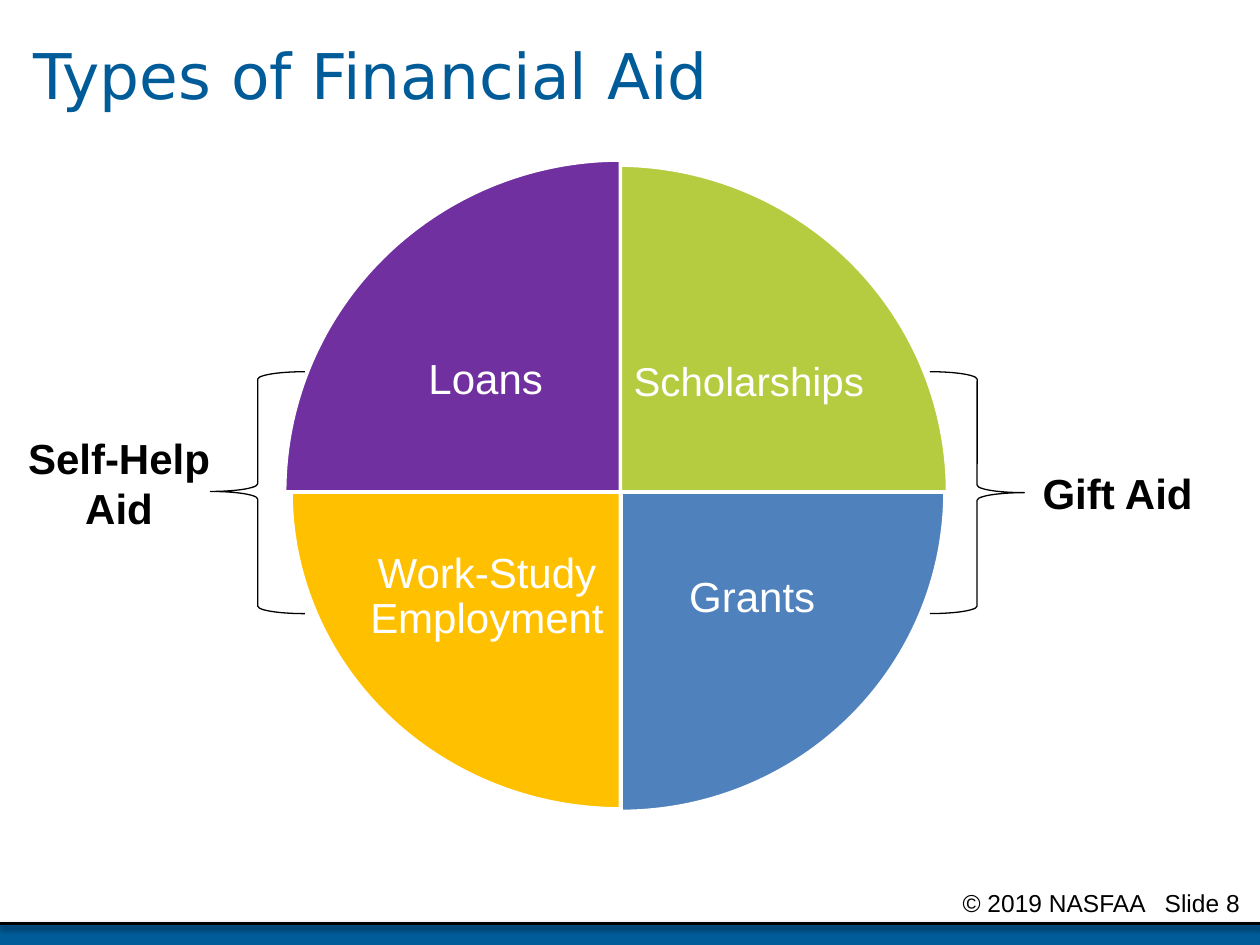
from lxml.etree import SubElement
from pptx import Presentation
from pptx.dml.color import RGBColor
from pptx.enum.shapes import MSO_CONNECTOR, MSO_SHAPE
from pptx.enum.text import MSO_ANCHOR, PP_ALIGN
from pptx.oxml.ns import qn
from pptx.util import Pt

BLUE = RGBColor(0x00, 0x5B, 0x99)
BLACK = RGBColor(0x00, 0x00, 0x00)
WHITE = RGBColor(0xFF, 0xFF, 0xFF)
GREEN = RGBColor(0xB5, 0xCC, 0x40)
STEEL = RGBColor(0x4F, 0x81, 0xBD)
GOLD = RGBColor(0xFF, 0xC0, 0x00)
PURPLE = RGBColor(0x70, 0x30, 0xA0)

WIDE, HIGH = 720, 540
BASE = 527.76
TURN = 54

SLICES = [
    ("Scholarships", GREEN, (163.44, 94.32, 378, 373.68), (356.4, 163.44, 139.68, 111.6),
     23, PP_ALIGN.RIGHT),
    ("Grants", STEEL, (169.92, 98.64, 370.08, 365.04), (361.44, 288, 136.8, 108.72),
     24, PP_ALIGN.CENTER),
    ("Work-Study Employment", GOLD, (166.32, 100.08, 376.56, 362.16), (208.8, 287.28, 138.96, 108),
     24, PP_ALIGN.CENTER),
    ("Loans", PURPLE, (162.72, 91.44, 383.76, 379.44), (206.64, 161.28, 141.84, 113.04),
     24, PP_ALIGN.CENTER),
]
SIDES = [
    ("Gift Aid", MSO_SHAPE.RIGHT_BRACE, 531.36, 0.5, (580.32, 263.52, 116.64, 36)),
    ("Self-Help Aid", MSO_SHAPE.LEFT_BRACE, 120.24, 0.495, (7.92, 243.36, 120.24, 65.52)),
]

deck = Presentation()
deck.slide_width, deck.slide_height = Pt(WIDE), Pt(HIGH)
slide = deck.slides.add_slide(deck.slide_layouts[6])
shapes = slide.shapes


def write(text, box, size=24, font="Arial", color=BLACK, bold=False, align=PP_ALIGN.CENTER,
          anchor=MSO_ANCHOR.TOP, inset=(7.2, 3.6), space=None, tab=None):
    frame = shapes.add_textbox(*map(Pt, box)).text_frame
    frame.word_wrap = True
    frame.vertical_anchor = anchor
    frame.margin_left = frame.margin_right = Pt(inset[0])
    frame.margin_top = frame.margin_bottom = Pt(inset[1])
    para = frame.paragraphs[0]
    para.alignment = align
    if space:
        para.line_spacing = space
    if tab:
        stops = SubElement(para._p.get_or_add_pPr(), qn("a:tabLst"))
        SubElement(stops, qn("a:tab"), pos=str(Pt(tab)), algn="r")
    run = para.add_run()
    run.text = text
    run.font.size = Pt(size)
    run.font.name = font
    run.font.bold = bold
    run.font.color.rgb = color


def draw(kind, box, fill=None, line=None, width=1, adjust=()):
    shape = shapes.add_shape(kind, *map(Pt, box))
    shape.shadow.inherit = False
    if fill is None:
        shape.fill.background()
    else:
        shape.fill.solid()
        shape.fill.fore_color.rgb = fill
    if line is None:
        shape.line.fill.background()
    else:
        shape.line.color.rgb = line
        shape.line.width = Pt(width)
    for i, value in enumerate(adjust):
        shape.adjustments[i] = value


def rule():
    line = shapes.add_connector(MSO_CONNECTOR.STRAIGHT, Pt(0), Pt(BASE), Pt(WIDE), Pt(BASE))
    line.line.color.rgb = BLACK
    line.line.width = Pt(2)
    effects = SubElement(line._element.spPr, qn("a:effectLst"))
    shade = SubElement(effects, qn("a:outerShdw"), blurRad=str(Pt(3.1)), dist=str(Pt(1.6)),
                       dir="5400000", rotWithShape="0")
    tint = SubElement(shade, qn("a:srgbClr"), val=str(BLACK))
    SubElement(tint, qn("a:alpha"), val="38000")


draw(MSO_SHAPE.RECTANGLE, (0, BASE, WIDE, 14.4), fill=BLUE)
rule()
write("© 2019 NASFAA\tSlide 8", (543, 504, 177, 18), size=14, align=PP_ALIGN.LEFT, tab=158.4)
write("Types of Financial Aid", (12.24, 0, 696.24, 90), size=36, font="DejaVu Sans", color=BLUE,
      align=PP_ALIGN.LEFT, anchor=MSO_ANCHOR.MIDDLE, space=0.9)

for i, (name, fill, pie, label, size, align) in enumerate(SLICES):
    start, end = (i + 3) % 4 * TURN, i * TURN
    draw(MSO_SHAPE.PIE, pie, fill=fill, line=WHITE, width=2, adjust=(start, end))
    write(name, label, size=size, color=WHITE, align=align, anchor=MSO_ANCHOR.MIDDLE,
          inset=(2.16, 2.16), space=0.9)

for name, kind, left, tip, label in SIDES:
    draw(kind, (left, 212.4, 54, 138.24), line=BLACK, width=0.75, adjust=(0.08, tip))
    write(name, label, bold=True)

deck.save("out.pptx")
